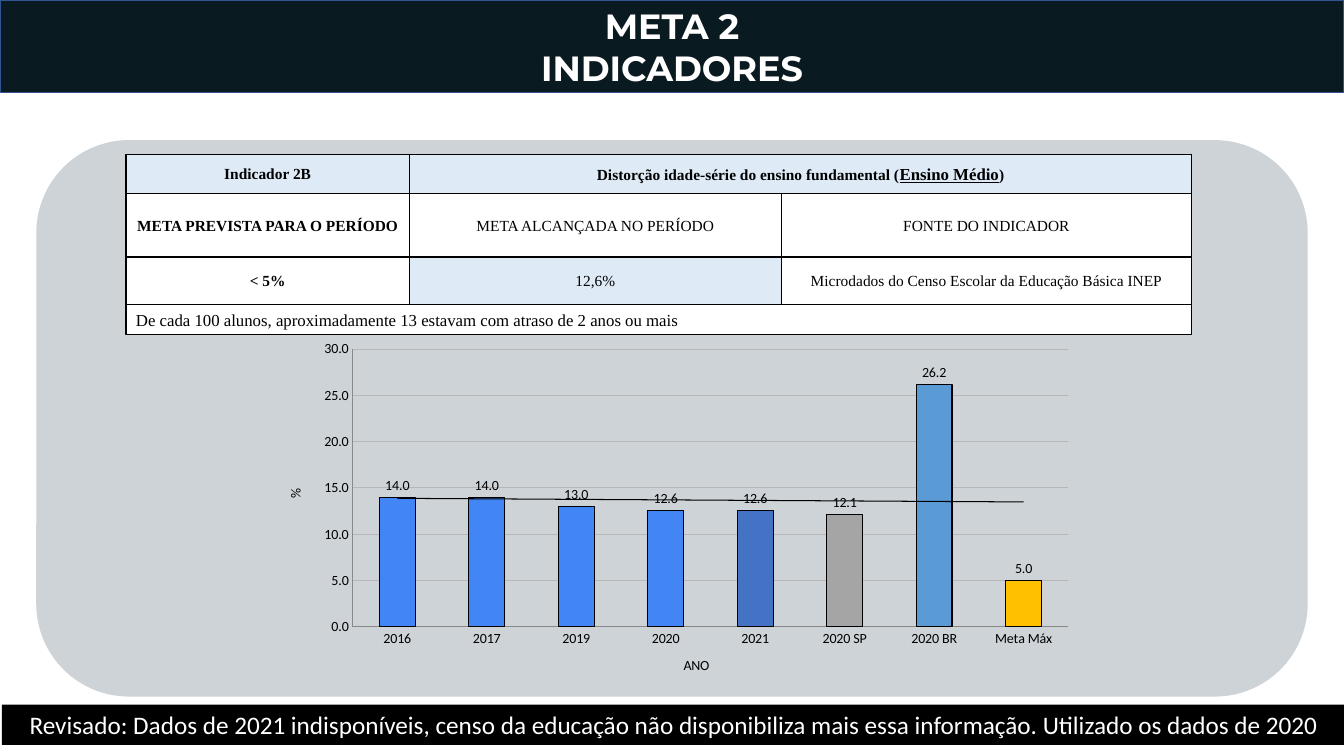
from dataclasses import dataclass

from lxml import etree
from pptx import Presentation
from pptx.chart.data import CategoryChartData
from pptx.dml.color import RGBColor
from pptx.enum.chart import XL_CHART_TYPE as ChartType
from pptx.enum.chart import XL_LABEL_POSITION as LabelPosition
from pptx.enum.chart import XL_TICK_MARK as TickMark
from pptx.enum.shapes import MSO_SHAPE as Preset
from pptx.enum.text import MSO_ANCHOR as Anchor
from pptx.enum.text import MSO_AUTO_SIZE as AutoSize
from pptx.enum.text import PP_ALIGN as Align
from pptx.oxml import parse_xml
from pptx.oxml.ns import nsdecls, qn
from pptx.util import Inches, Pt

BLACK = RGBColor(0, 0, 0)
WHITE = RGBColor(255, 255, 255)
NAVY = RGBColor(0x0A, 0x1A, 0x21)
TITLE_EDGE = RGBColor(0x32, 0x54, 0x91)
PANEL_GREY = RGBColor(0xCE, 0xD3, 0xD8)
PALE_BLUE = RGBColor(0xDE, 0xEB, 0xF7)
GRID_GREY = RGBColor(0xB7, 0xB7, 0xB7)
AXIS_GREY = RGBColor(0x88, 0x88, 0x88)
BAR_BLUE = RGBColor(0x42, 0x85, 0xF4)
BAR_2021 = RGBColor(0x44, 0x72, 0xC4)
BAR_SP = RGBColor(0xA5, 0xA5, 0xA5)
BAR_BR = RGBColor(0x5B, 0x9B, 0xD5)
BAR_GOAL = RGBColor(0xFF, 0xC0, 0x00)
SERIF = "Times New Roman"
SANS = "Calibri"


@dataclass(frozen=True)
class Bar:
    label: str
    value: float
    color: RGBColor = BAR_BLUE


@dataclass(frozen=True)
class Entry:
    """A table cell; its text is a list of pieces, underlined at odd places."""
    pieces: tuple[str, ...]
    fill: RGBColor = WHITE
    bold: bool = False


BARS = [
    Bar("2016", 14), Bar("2017", 14), Bar("2019", 13), Bar("2020", 12.6),
    Bar("2021", 12.6, BAR_2021), Bar("2020 SP", 12.1, BAR_SP),
    Bar("2020 BR", 26.2, BAR_BR), Bar("Meta Máx", 5, BAR_GOAL),
]
COLUMN_WIDTHS = (2.81, 3.69, 4.07)
ROW_HEIGHTS = (0.39, 0.63, 0.47)
ENTRIES = [
    [Entry(("Indicador 2B",), PALE_BLUE, True),
     Entry(("Distorção idade-série do ensino fundamental (", "Ensino Médio", ")"),
           PALE_BLUE, True)],
    [Entry(("META PREVISTA PARA O PERÍODO",), bold=True),
     Entry(("META ALCANÇADA NO PERÍODO",)), Entry(("FONTE DO INDICADOR",))],
    [Entry(("< 5%",), bold=True), Entry(("12,6%",), PALE_BLUE),
     Entry(("Microdados do Censo Escolar da Educação Básica INEP",))],
]


def add_span(para, text: str, *, size: float, name: str = SERIF,
             color: RGBColor = BLACK, bold: bool = False,
             underline: bool = False) -> None:
    span = para.add_run()
    span.text = text
    font = span.font
    font.size, font.name, font.bold = Pt(size), name, bold
    font.underline = underline
    font.color.rgb = color


def place(shape, left: float, top: float, width: float, height: float) -> None:
    shape.left, shape.top = Inches(left), Inches(top)
    shape.width, shape.height = Inches(width), Inches(height)


def paint(shape, fill: RGBColor, edge: RGBColor | None = None,
          weight: float = 0.75) -> None:
    shape.shadow.inherit = False
    shape.fill.solid()
    shape.fill.fore_color.rgb = fill
    if edge is None:
        shape.line.fill.background()
    else:
        shape.line.color.rgb = edge
        shape.line.width = Pt(weight)


def add_block(page, preset: Preset, bounds: tuple[float, ...], fill: RGBColor,
              edge: RGBColor | None = None):
    box = page.shapes.add_shape(preset, *map(Inches, bounds))
    paint(box, fill, edge)
    return box


def add_strip(page, bounds: tuple[float, ...], fill: RGBColor, text: str, *,
              align: Align, edge: RGBColor | None = None, **style) -> None:
    """Add a one-line text bar."""
    box = add_block(page, Preset.RECTANGLE, bounds, fill, edge)
    frame = box.text_frame
    frame.word_wrap = True
    frame.auto_size = AutoSize.SHAPE_TO_FIT_TEXT
    para = frame.paragraphs[0]
    para.alignment = align
    add_span(para, text, **style)


def add_title(page) -> None:
    title = page.shapes.title
    place(title, 0, 0, 13.33, 0.92)
    paint(title, NAVY, TITLE_EDGE, 1)
    frame = title.text_frame
    frame.auto_size = AutoSize.NONE
    frame.vertical_anchor = Anchor.MIDDLE
    frame.margin_top = frame.margin_bottom = 0
    for number, text in enumerate(("META 2", "INDICADORES")):
        para = frame.add_paragraph() if number else frame.paragraphs[0]
        para.alignment = Align.CENTER
        add_span(para, text, size=25, name="Montserrat", color=WHITE, bold=True)


def add_borders(cell) -> None:
    properties = cell._tc.get_or_add_tcPr()
    for side in ("lnL", "lnR", "lnT", "lnB"):
        line = etree.SubElement(properties, qn(f"a:{side}"), w=str(Pt(1)))
        fill = etree.SubElement(line, qn("a:solidFill"))
        etree.SubElement(fill, qn("a:srgbClr"), val=str(BLACK))


def fill_cell(cell, entry: Entry, space_after: float) -> None:
    cell.fill.solid()
    cell.fill.fore_color.rgb = entry.fill
    cell.vertical_anchor = Anchor.MIDDLE
    cell.margin_left = cell.margin_right = Inches(0.07)
    cell.margin_top = cell.margin_bottom = 0
    para = cell.text_frame.paragraphs[0]
    para.alignment = Align.CENTER
    para.line_spacing = 1.07
    para.space_after = Pt(space_after)
    for number, piece in enumerate(entry.pieces):
        marked = number % 2 == 1
        add_span(para, piece, size=12 if marked else 11, bold=entry.bold,
                 underline=marked)


def add_indicator_table(page) -> None:
    table = page.shapes.add_table(
        len(ROW_HEIGHTS), len(COLUMN_WIDTHS), Inches(1.25), Inches(1.53),
        Inches(sum(COLUMN_WIDTHS)), Inches(sum(ROW_HEIGHTS))).table
    table.first_row = table.horz_banding = False
    for column, width in zip(table.columns, COLUMN_WIDTHS):
        column.width = Inches(width)
    for row, height in zip(table.rows, ROW_HEIGHTS):
        row.height = Inches(height)
    for cell in table.iter_cells():
        add_borders(cell)
    table.cell(0, 1).merge(table.cell(0, 2))
    for r, entries in enumerate(ENTRIES):
        for c, entry in enumerate(entries):
            fill_cell(table.cell(r, c), entry, 0 if r == 2 else 8)


def format_axis(axis, title: str) -> None:
    axis.major_tick_mark = axis.minor_tick_mark = TickMark.NONE
    axis.format.line.color.rgb = AXIS_GREY
    add_span(axis.axis_title.text_frame.paragraphs[0], title, size=10, name=SANS)


def add_chart_xml(chart) -> None:
    """Add the trend line, the plot position and the clear background."""
    root, space = chart.element, nsdecls("c", "a")
    root.find(f".//{qn('c:cat')}").addprevious(parse_xml(
        f'<c:trendline {space}><c:spPr><a:ln w="9525"><a:solidFill>'
        f'<a:srgbClr val="{BLACK}"/></a:solidFill></a:ln></c:spPr>'
        '<c:trendlineType val="linear"/><c:dispRSqr val="0"/>'
        '<c:dispEq val="0"/></c:trendline>'))
    bounds = "".join(f'<c:{tag} val="{value}"/>' for tag, value in (
        ("x", 0.11), ("y", 0.04), ("w", 0.87), ("h", 0.77)))
    root.find(f".//{qn('c:plotArea')}").insert(0, parse_xml(
        f'<c:layout {space}><c:manualLayout><c:layoutTarget val="inner"/>'
        '<c:xMode val="edge"/><c:yMode val="edge"/>'
        f'{bounds}</c:manualLayout></c:layout>'))
    root.find(qn("c:chart")).addnext(
        parse_xml(f'<c:spPr {space}><a:noFill/><a:ln><a:noFill/></a:ln></c:spPr>'))


def add_rate_chart(page) -> None:
    data = CategoryChartData(number_format="0.0")
    data.categories = [bar.label for bar in BARS]
    data.add_series("Series 1", [bar.value for bar in BARS])
    chart = page.shapes.add_chart(
        ChartType.COLUMN_CLUSTERED, *map(Inches, (2.6, 3.32, 8.16, 3.58)), data).chart
    chart.has_legend = chart.has_title = False
    chart.font.size, chart.font.name = Pt(10), SANS
    chart.font.color.rgb = BLACK

    format_axis(chart.category_axis, "ANO")
    values = chart.value_axis
    format_axis(values, "%")
    values.minimum_scale, values.maximum_scale, values.major_unit = 0, 30, 5
    values.tick_labels.number_format = "0.0"
    values.tick_labels.number_format_is_linked = False
    values.major_gridlines.format.line.color.rgb = GRID_GREY
    values.major_gridlines.format.line.width = Pt(0.75)

    plot = chart.plots[0]
    plot.gap_width = 150
    plot.vary_by_categories = False
    series = plot.series[0]
    points = [(series.points[i], bar.color) for i, bar in enumerate(BARS)
              if bar.color != BAR_BLUE]
    for target, color in [(series, BAR_BLUE), *points]:
        target.format.fill.solid()
        target.format.fill.fore_color.rgb = color
        target.format.line.color.rgb = BLACK
        target.format.line.width = Pt(0.75)
    labels = series.data_labels
    labels.show_value = True
    labels.number_format, labels.number_format_is_linked = "0.0", False
    labels.position = LabelPosition.OUTSIDE_END
    add_chart_xml(chart)


def main() -> None:
    deck = Presentation()
    deck.slide_width, deck.slide_height = Inches(13.33), Inches(7.5)
    page = deck.slides.add_slide(deck.slide_layouts.get_by_name("Title Only"))
    add_title(page)
    add_block(page, Preset.ROUNDED_RECTANGLE, (0.36, 1.39, 12.61, 5.52), PANEL_GREY)
    add_indicator_table(page)
    add_strip(page, (1.25, 3.02, 10.57, 0.3), WHITE,
              "De cada 100 alunos, aproximadamente 13 estavam com atraso de 2 anos ou mais",
              align=Align.LEFT, edge=BLACK, size=12)
    add_rate_chart(page)
    add_strip(page, (0.02, 6.99, 13.33, 0.4), BLACK,
              "Revisado: Dados de 2021 indisponíveis, censo da educação não "
              "disponibiliza mais essa informação. Utilizado os dados de 2020",
              align=Align.CENTER, size=18, name=SANS, color=WHITE)
    deck.save("out.pptx")


if __name__ == "__main__":
    main()
